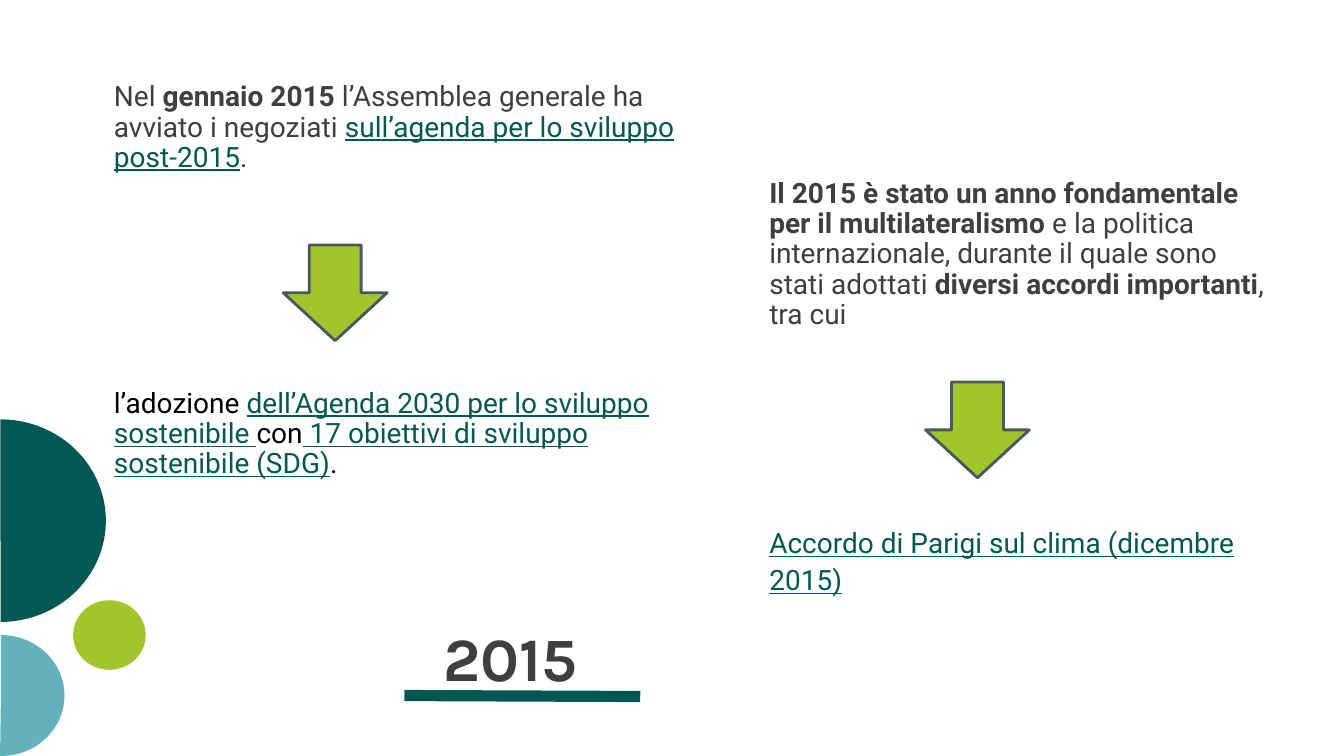
import pptx
import pptx.util
import pptx.dml.color
import pptx.enum.shapes
import pptx.enum.text
import pptx.oxml.ns
import lxml.etree

Inches, Pt = pptx.util.Inches, pptx.util.Pt
RGBColor = pptx.dml.color.RGBColor
SHAPE = pptx.enum.shapes.MSO_SHAPE
ANCHOR = pptx.enum.text.MSO_ANCHOR

TEAL = RGBColor(0x03, 0x58, 0x54)
LIME = RGBColor(0xA3, 0xC4, 0x2A)
SKY = RGBColor(0x64, 0xB1, 0xBE)
SLATE = RGBColor(0x47, 0x59, 0x5C)
GREY = RGBColor(0x3F, 0x3F, 0x3F)
BLACK = RGBColor(0, 0, 0)

# Content: each paragraph is a list of (text, style) runs
TITLE = [[("2015", "bold")]]
NEGOTIATIONS = [[
    ("Nel ", "plain"), ("gennaio 2015 ", "bold"),
    ("l’Assemblea generale ha avviato i negoziati ", "plain"),
    ("sull’agenda per lo sviluppo post-2015", "link"), (".", "plain"),
]]
AGENDA = [[
    ("l’adozione ", "plain"),
    ("dell’Agenda 2030 per lo sviluppo sostenibile ", "link"),
    ("con", "plain"),
    (" 17 obiettivi di sviluppo sostenibile (SDG)", "link"), (".", "plain"),
]]
AGREEMENTS = [
    [
        ("Il 2015 è stato un anno fondamentale per il multilateralismo ", "bold"),
        ("e la politica internazionale, durante il quale sono stati adottati ", "plain"),
        ("diversi accordi importanti", "bold"), (", tra cui", "plain"),
    ],
    [("Accordo di Parigi sul clima (dicembre 2015)", "link")],
]

# Corner circles: preset, box, fill, adjustments
CIRCLES = [
    (SHAPE.PIE, (-1, 4.12, 2.01, 2.09), TEAL, (0, 107.96)),
    (SHAPE.PIE, (-0.59, 6.27, 1.2, 1.26), SKY, (0, 108.52)),
    (SHAPE.OVAL, (0.74, 5.94, 0.69, 0.72), LIME, ()),
]
ARROWS = [(2.81, 2.43), (9.18, 3.79)]
ARROW_SIZE = (1.03, 0.95)


def add_text(slide, box, paragraphs, font="Roboto", size=20, color=GREY,
             insets=(0, 0, 0, 0), spacing=(0.9,), gap=0, anchor=ANCHOR.TOP):
    frame = slide.shapes.add_textbox(*map(Inches, box)).text_frame
    frame.word_wrap = True
    frame.vertical_anchor = anchor
    (frame.margin_left, frame.margin_top,
     frame.margin_right, frame.margin_bottom) = map(Inches, insets)
    for index, runs in enumerate(paragraphs):
        paragraph = frame.paragraphs[0] if index == 0 else frame.add_paragraph()
        paragraph.line_spacing = spacing[index]
        if index:
            paragraph.space_before = Pt(gap)
        for text, style in runs:
            run = paragraph.add_run()
            run.text = text
            run.font.name = font
            run.font.size = Pt(size)
            run.font.bold = style == "bold"
            run.font.underline = style == "link"
            run.font.color.rgb = TEAL if style == "link" else color


def add_filled(slide, preset, box, fill, adjustments=(), rotation=0, outline=None):
    shape = slide.shapes.add_shape(preset, *map(Inches, box))
    shape.shadow.inherit = False
    shape.rotation = rotation
    for index, value in enumerate(adjustments):
        shape.adjustments[index] = value
    shape.fill.solid()
    shape.fill.fore_color.rgb = fill
    if outline is None:
        shape.line.fill.background()
    else:
        shape.line.color.rgb = outline
        shape.line.width = Pt(2)


def main():
    presentation = pptx.Presentation()
    presentation.slide_width = Inches(13.33)
    presentation.slide_height = Inches(7.5)
    slide = presentation.slides.add_slide(presentation.slide_layouts[6])

    # Rule under the title
    rule = slide.shapes.add_connector(
        pptx.enum.shapes.MSO_CONNECTOR.STRAIGHT,
        *map(Inches, (4.01, 6.9, 6.35, 6.91)))
    rule.line.color.rgb = TEAL
    rule.line.width = Pt(8)
    lxml.etree.SubElement(rule._element.spPr, pptx.oxml.ns.qn("a:effectLst"))

    # Corner circles
    for preset, box, fill, adjustments in CIRCLES:
        add_filled(slide, preset, box, fill, adjustments, rotation=270)

    # Title and texts
    add_text(slide, (4.4, 5.83, 2.4, 1.51), TITLE, font="Karla", size=44,
             spacing=(0.8,), anchor=ANCHOR.MIDDLE)
    add_text(slide, (0.88, 0.52, 6.55, 2.41), NEGOTIATIONS,
             insets=(0.25, 0.3, 0.1, 0.05))
    add_text(slide, (7.38, 1.73, 5.32, 5.7), AGREEMENTS,
             insets=(0.25, 0.05, 0.1, 0.05), spacing=(0.9, 1.1), gap=137)
    add_text(slide, (0.78, 3.81, 6.12, 1.01), AGENDA, color=BLACK,
             insets=(0.35, 0.05, 0.1, 0.05))

    # Arrows
    for position in ARROWS:
        add_filled(slide, SHAPE.DOWN_ARROW, position + ARROW_SIZE, LIME,
                   (0.5, 0.5), outline=SLATE)

    presentation.save("out.pptx")


if __name__ == "__main__":
    main()
